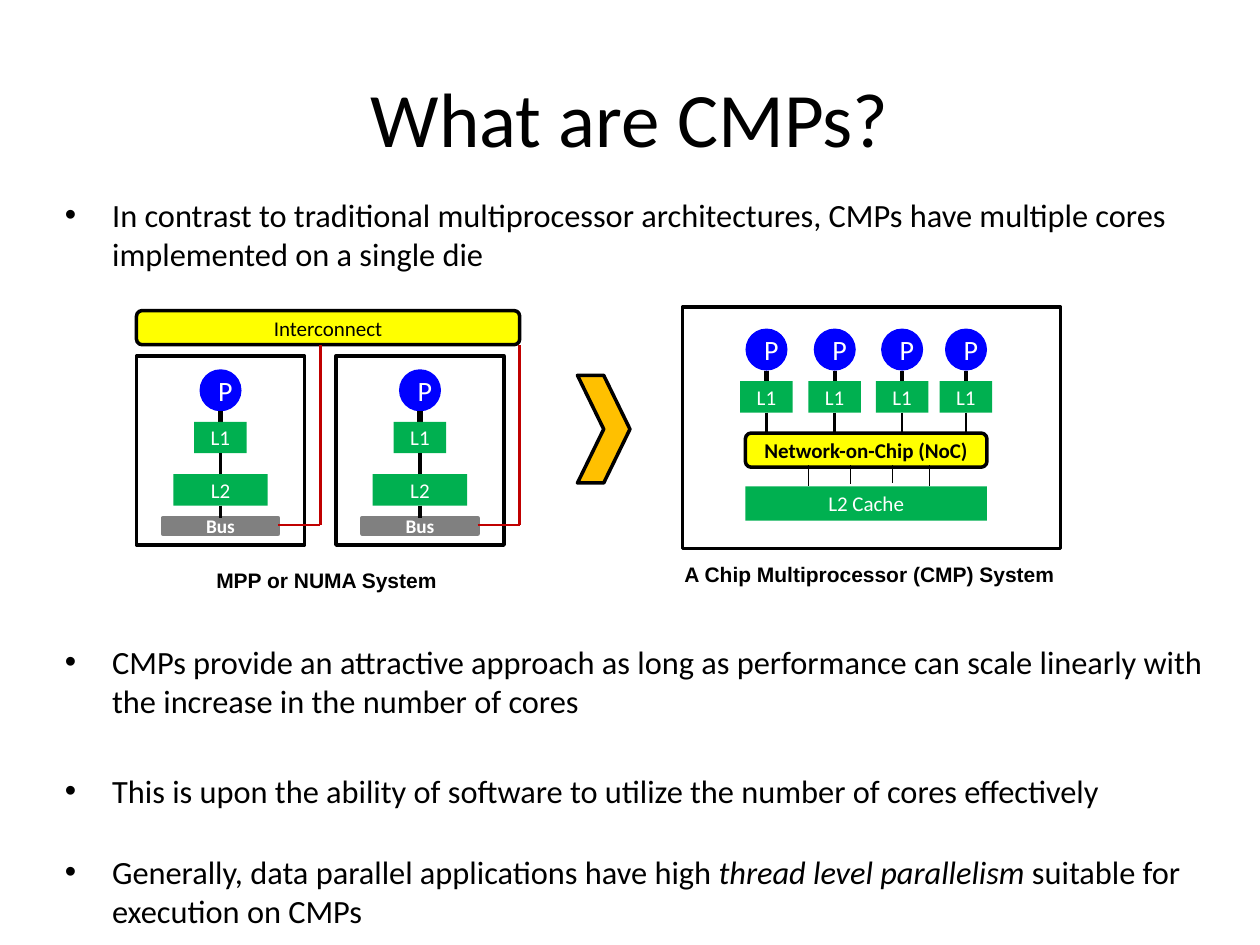
import pptx
import pptx.util
import pptx.dml.color
import pptx.enum.shapes
import pptx.enum.text
import pptx.oxml.ns
from lxml import etree

Pt = pptx.util.Pt
RGB = pptx.dml.color.RGBColor
KIND = pptx.enum.shapes.MSO_SHAPE
ALIGN = pptx.enum.text.PP_ALIGN
ANCHOR = pptx.enum.text.MSO_ANCHOR
FIT = pptx.enum.text.MSO_AUTO_SIZE
qn = pptx.oxml.ns.qn

BLACK = RGB(0x00, 0x00, 0x00)
WHITE = RGB(0xFF, 0xFF, 0xFF)
BLUE = RGB(0x00, 0x00, 0xFF)
GREEN = RGB(0x00, 0xB0, 0x50)
YELLOW = RGB(0xFF, 0xFF, 0x00)
AMBER = RGB(0xFF, 0xC0, 0x00)
GRAY = RGB(0x80, 0x80, 0x80)
RED = RGB(0xC0, 0x00, 0x00)

TITLE = dict(size=Pt(44), name="Calibri")
BODY = dict(size=Pt(18.5), name="Calibri")
CORE = dict(size=Pt(16), name="Calibri")
PART = dict(size=Pt(12), name="Calibri")
STRONG = dict(PART, bold=True)
BUS = dict(size=Pt(11), name="Calibri", bold=True)
LABEL = dict(size=Pt(12), name="Arial", bold=True)

# Space before, then the runs of each bullet.
POINTS = [
    (0, ["In contrast to traditional multiprocessor architectures, CMPs have "
         "multiple cores implemented on a single die"]),
    (211, ["CMPs provide an attractive approach as long as performance can "
           "scale linearly with the increase in the number of cores"]),
    (29, ["This is upon the ability of software to utilize the number of "
          "cores effectively"]),
    (24.3, ["Generally, data parallel applications have high ",
            "thread level parallelism",
            " suitable for execution on CMPs"]),
]


class Sketch:
    """Holds the current slide and the style of its elements."""

    def __init__(self, slide):
        self.shapes = slide.shapes

    def add_run(self, para, text, form, color=BLACK):
        run = para.add_run()
        run.text = text
        for key, val in form.items():
            setattr(run.font, key, val)
        run.font.color.rgb = color

    def text(self, box, words, form, align=ALIGN.LEFT, wrap=True):
        frame = self.shapes.add_textbox(*map(Pt, box)).text_frame
        frame.word_wrap = wrap
        if wrap:
            frame.vertical_anchor = ANCHOR.MIDDLE
        else:
            frame.auto_size = FIT.SHAPE_TO_FIT_TEXT
        para = frame.paragraphs[0]
        para.alignment = align
        self.add_run(para, words, form)

    def bullets(self, box, points):
        """Add bulleted paragraphs; every second run is italic."""
        frame = self.shapes.add_textbox(*map(Pt, box)).text_frame
        frame.word_wrap = True
        for i, (gap, runs) in enumerate(points):
            para = frame.add_paragraph() if i else frame.paragraphs[0]
            para.space_before = Pt(gap)
            props = para._p.get_or_add_pPr()
            props.set("marL", str(Pt(27)))
            props.set("indent", str(-Pt(27)))
            etree.SubElement(props, qn("a:buFont"), typeface="Arial")
            etree.SubElement(props, qn("a:buChar"), char="•")
            for j, words in enumerate(runs):
                self.add_run(para, words, dict(BODY, italic=j % 2 == 1))

    def shape(self, kind, box, fill=None, line=None, width=2,
              words="", form=PART, color=WHITE):
        shape = self.shapes.add_shape(kind, *map(Pt, box))
        shape.shadow.inherit = False
        for part, tint in ((shape.fill, fill), (shape.line.fill, line)):
            if tint is None:
                part.background()
            else:
                part.solid()
                part.fore_color.rgb = tint
        if line is not None:
            shape.line.width = Pt(width)
        if words:
            frame = shape.text_frame
            frame.vertical_anchor = ANCHOR.MIDDLE
            para = frame.paragraphs[0]
            para.alignment = ALIGN.CENTER
            self.add_run(para, words, form, color)

    def line(self, x1, y1, x2, y2, width, color=BLACK):
        link = self.shapes.add_connector(
            pptx.enum.shapes.MSO_CONNECTOR.STRAIGHT,
            *map(Pt, (x1, y1, x2, y2)))
        link.line.width = Pt(width)
        link.line.color.rgb = color
        etree.SubElement(link._element.spPr, qn("a:effectLst"))

    def core(self, mid, top, drop, widths):
        """Draw a processor over its L1 cache, with a line of length drop below."""
        self.shape(KIND.OVAL, (mid - 12, top, 24, 24), BLUE,
                   words="P", form=CORE)
        self.line(mid, top + 24, mid, top + 30, widths[0])
        self.shape(KIND.RECTANGLE, (mid - 15, top + 30, 30, 18), GREEN,
                   words="L1")
        self.line(mid, top + 48, mid, top + 48 + drop, widths[1])

    def node(self, mid):
        """Draw one node of the MPP system, wired to the interconnect."""
        self.shape(KIND.RECTANGLE, (mid - 48, 203.5, 96, 108), line=BLACK)
        self.core(mid, 211, 12, (3, 2))
        self.shape(KIND.RECTANGLE, (mid - 27, 271, 54, 18), GREEN, words="L2")
        self.shape(KIND.RECTANGLE, (mid - 33, 296, 66, 9), GRAY, GRAY, 2.5,
                   "Bus", BUS)
        self.line(mid, 289, mid, 296, 2)
        self.line(mid + 33, 300, mid + 57, 300, 1.5, RED)
        self.line(mid + 57, 300, mid + 57, 197, 1.5, RED)


def main():
    deck = pptx.Presentation()
    deck.slide_width, deck.slide_height = Pt(720), Pt(540)
    art = Sketch(deck.slides.add_slide(deck.slide_layouts[6]))

    art.text((36, 21.6, 648, 90), "What are CMPs?", TITLE, ALIGN.CENTER)
    art.bullets((30, 108, 666, 420), POINTS)

    art.shape(KIND.ROUNDED_RECTANGLE, (78, 177.5, 219, 19.5), YELLOW, BLACK,
              words="Interconnect", color=BLACK)
    for mid in (126, 240):
        art.node(mid)
    art.text((116.5, 320.5, 142, 21.6), "MPP or NUMA System", LABEL,
             wrap=False)

    art.shape(KIND.CHEVRON, (330, 214.5, 30, 61.5), AMBER, BLACK)

    art.shape(KIND.RECTANGLE, (390, 175.5, 216, 138), line=BLACK)
    for mid in (438, 477, 515.5, 552):
        art.core(mid, 187.75, 12, (2.5, 1.5))
    art.shape(KIND.RECTANGLE, (426, 278, 138, 19.5), GREEN, words="L2 Cache")
    art.shape(KIND.ROUNDED_RECTANGLE, (426, 247.5, 138, 19.5), YELLOW, BLACK,
              words="Network-on-Chip (NoC)", form=STRONG, color=BLACK)
    for x, end in ((462, 278), (486, 276.5), (510, 276), (531, 278)):
        art.line(x, 266, x, end, 0.75)
    art.text((384, 317.5, 228, 21.6), "A Chip Multiprocessor (CMP) System",
             LABEL, wrap=False)

    deck.save("out.pptx")


if __name__ == "__main__":
    main()
